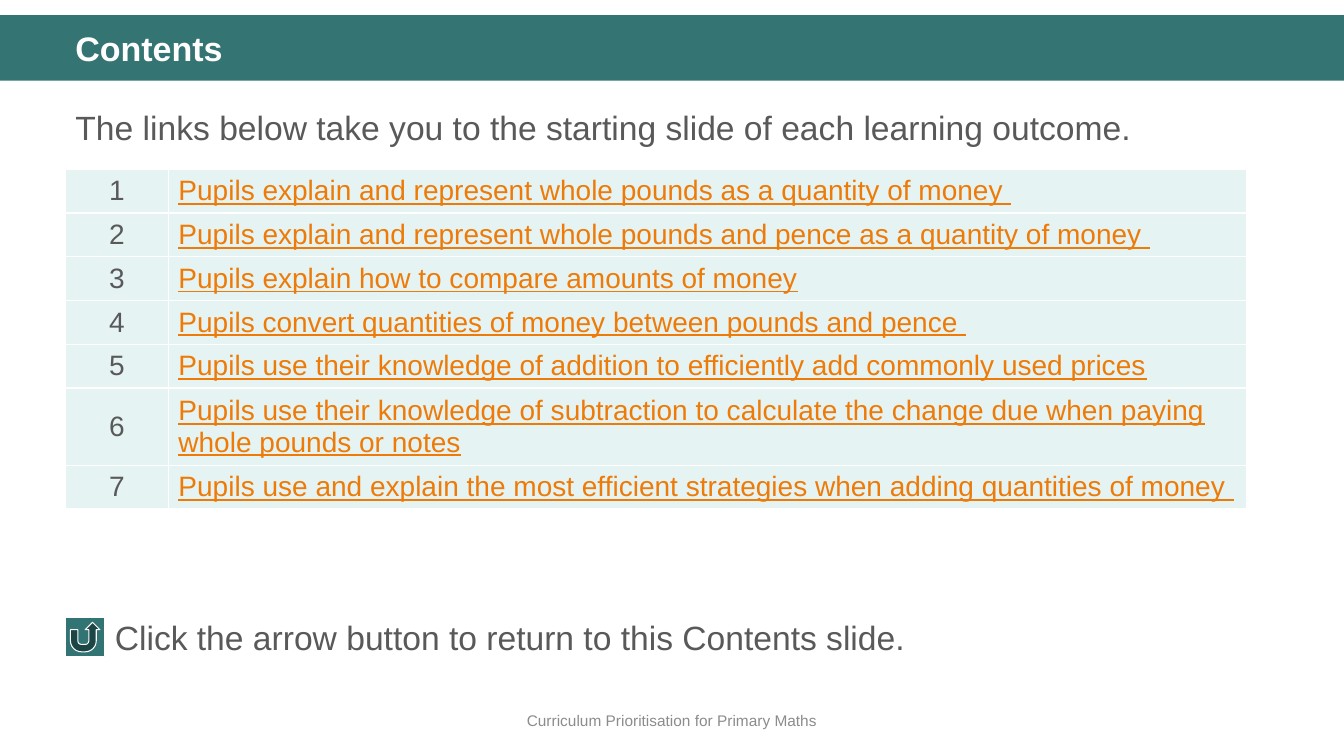
import lxml.etree
import pptx
import pptx.dml.color
import pptx.enum.shapes
import pptx.enum.text
import pptx.oxml.ns
import pptx.util

Inches = pptx.util.Inches
Pt = pptx.util.Pt
RGBColor = pptx.dml.color.RGBColor
Align = pptx.enum.text.PP_ALIGN
Anchor = pptx.enum.text.MSO_ANCHOR
Shape = pptx.enum.shapes.MSO_SHAPE
qn = pptx.oxml.ns.qn

BANNER_TEAL = RGBColor(0x34, 0x75, 0x74)
BUTTON_TEAL = RGBColor(0x32, 0x74, 0x73)
PALE_TEAL = RGBColor(0xE5, 0xF3, 0xF2)
LINK_ORANGE = RGBColor(0xEE, 0x7B, 0x08)
BODY_GREY = RGBColor(0x59, 0x59, 0x59)
FOOTER_GREY = RGBColor(0x8C, 0x8C, 0x8C)
WHITE = RGBColor(0xFF, 0xFF, 0xFF)

SLIDE_WIDTH, SLIDE_HEIGHT = 13.33, 7.5
MARGIN = 0.65
NUMBER_WIDTH = 1.02
LINE_HEIGHT, TWO_LINE_HEIGHT = 0.41, 0.71

# Trailing spaces are part of the underlined link text
OUTCOMES = [
    "Pupils explain and represent whole pounds as a quantity of money ",
    "Pupils explain and represent whole pounds and pence as a quantity of money ",
    "Pupils explain how to compare amounts of money",
    "Pupils convert quantities of money between pounds and pence ",
    "Pupils use their knowledge of addition to efficiently add commonly used prices",
    "Pupils use their knowledge of subtraction to calculate the change due when paying "
    "whole pounds or notes",
    "Pupils use and explain the most efficient strategies when adding quantities of money ",
]
TWO_LINE_OUTCOME = 6


def style_paragraph(paragraph, size, color, align=Align.LEFT):
    paragraph.alignment = align
    paragraph.font.name = "Arial"
    paragraph.font.size = Pt(size)
    paragraph.font.color.rgb = color


def add_text(slide, text, left, top, width, height, size, color,
             align=Align.LEFT, anchor=Anchor.TOP):
    box = slide.shapes.add_textbox(Inches(left), Inches(top), Inches(width), Inches(height))
    box.text_frame.word_wrap = True
    box.text_frame.vertical_anchor = anchor
    paragraph = box.text_frame.paragraphs[0]
    paragraph.text = text
    style_paragraph(paragraph, size, color, align)
    return paragraph


def add_banner(slide, left, top, width, height):
    banner = slide.shapes.add_shape(
        Shape.RECTANGLE, Inches(left), Inches(top), Inches(width), Inches(height))
    banner.shadow.inherit = False
    banner.fill.solid()
    banner.fill.fore_color.rgb = BANNER_TEAL
    banner.line.fill.background()
    title = add_text(slide, "Contents", left + MARGIN, top + 0.12, 12.18, 0.47, 24.3, WHITE)
    title.font.bold = True
    title.line_spacing = 0.9


def add_introduction(slide, left, top, width, height):
    introduction = add_text(
        slide, "The links below take you to the starting slide of each learning outcome.",
        left, top, width, height, 24, BODY_GREY)
    introduction.line_spacing = 1.2
    introduction.space_before = Pt(10)


def add_cell_borders(cell):
    properties = cell._tc.get_or_add_tcPr()
    for position, side in enumerate(("a:lnL", "a:lnR", "a:lnT", "a:lnB")):
        border = lxml.etree.Element(qn(side), w=str(Pt(1)))
        fill = lxml.etree.SubElement(border, qn("a:solidFill"))
        lxml.etree.SubElement(fill, qn("a:srgbClr"), val=str(WHITE))
        properties.insert(position, border)


def fill_cell(cell, text, color, align):
    cell.fill.solid()
    cell.fill.fore_color.rgb = PALE_TEAL
    cell.vertical_anchor = Anchor.MIDDLE
    paragraph = cell.text_frame.paragraphs[0]
    paragraph.text = text
    style_paragraph(paragraph, 20, color, align)
    add_cell_borders(cell)
    return paragraph


def add_outcomes_table(slide, left, top, width):
    heights = [TWO_LINE_HEIGHT if number == TWO_LINE_OUTCOME else LINE_HEIGHT
               for number in range(1, len(OUTCOMES) + 1)]
    outcomes = slide.shapes.add_table(
        len(OUTCOMES), 2, Inches(left), Inches(top), Inches(width), Inches(sum(heights))).table
    outcomes.first_row = False
    outcomes.horz_banding = False
    outcomes.columns[0].width = Inches(NUMBER_WIDTH)
    outcomes.columns[1].width = Inches(width - NUMBER_WIDTH)
    for index, (outcome, height) in enumerate(zip(OUTCOMES, heights)):
        outcomes.rows[index].height = Inches(height)
        fill_cell(outcomes.cell(index, 0), str(index + 1), BODY_GREY, Align.CENTER)
        link = fill_cell(outcomes.cell(index, 1), outcome, LINK_ORANGE, Align.LEFT)
        link.font.underline = True


def add_return_hint(slide, left, top, width, height):
    button_size = 0.39
    button = slide.shapes.add_shape(
        Shape.ACTION_BUTTON_RETURN, Inches(left), Inches(top + (height - button_size) / 2),
        Inches(button_size), Inches(button_size))
    button.shadow.inherit = False
    button.fill.solid()
    button.fill.fore_color.rgb = BUTTON_TEAL
    button.line.color.rgb = WHITE
    button.line.width = Pt(0.75)
    add_text(slide, "Click the arrow button to return to this Contents slide.",
             left + button_size, top, width - button_size, height, 24, BODY_GREY)


def add_footer(slide, left, top, width, height):
    add_text(slide, "Curriculum Prioritisation for Primary Maths", left, top, width, height,
             11, FOOTER_GREY, Align.CENTER, Anchor.MIDDLE)


def main():
    presentation = pptx.Presentation()
    presentation.slide_width = Inches(SLIDE_WIDTH)
    presentation.slide_height = Inches(SLIDE_HEIGHT)
    slide = presentation.slides.add_slide(presentation.slide_layouts[6])

    add_banner(slide, 0, 0.15, SLIDE_WIDTH, 0.65)
    add_introduction(slide, MARGIN, 0.93, 12.18, 0.7)
    add_outcomes_table(slide, MARGIN, 1.68, 11.71)
    add_return_hint(slide, MARGIN, 6.07, 11.71, 0.5)
    add_footer(slide, 0, 6.95, SLIDE_WIDTH, 0.4)

    presentation.save("out.pptx")


if __name__ == "__main__":
    main()
